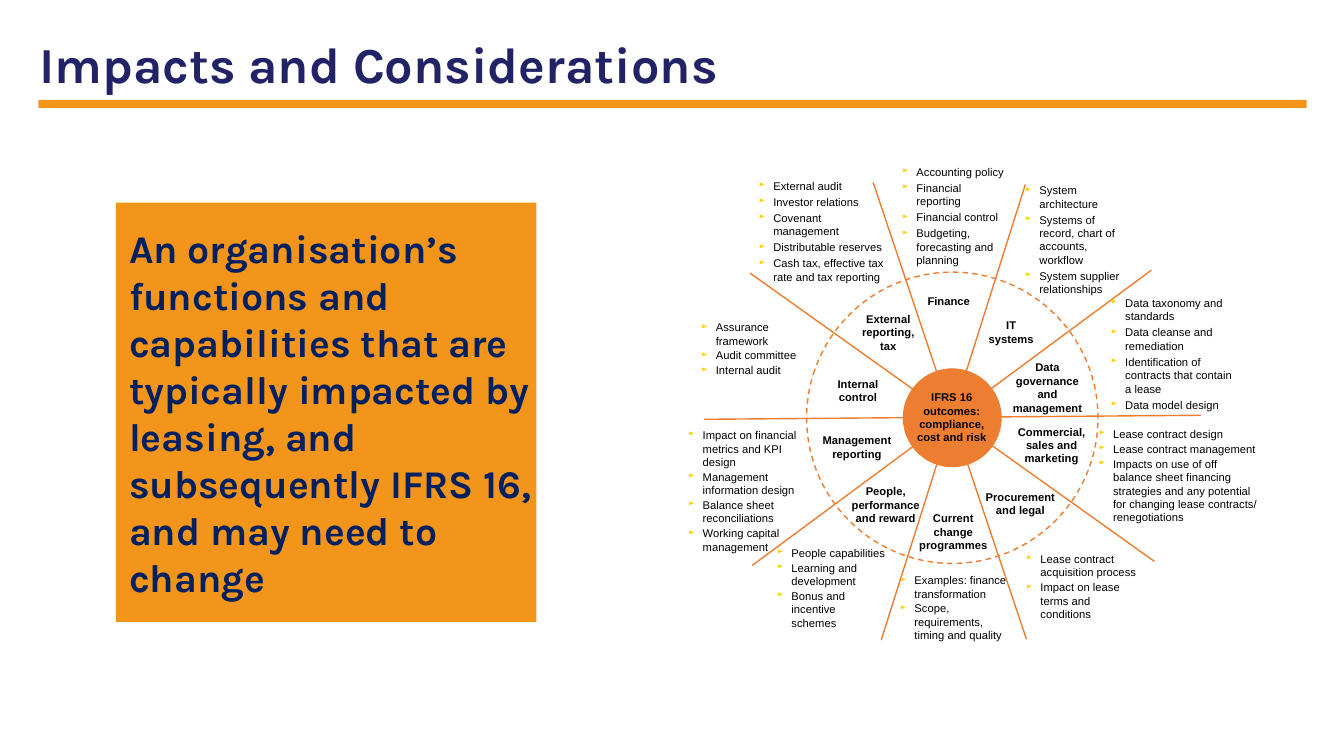
from dataclasses import dataclass

from lxml.etree import SubElement
from pptx import Presentation
from pptx.dml.color import RGBColor
from pptx.enum.dml import MSO_LINE_DASH_STYLE as Dash
from pptx.enum.shapes import MSO_CONNECTOR as Connector, MSO_SHAPE as Preset
from pptx.enum.text import MSO_ANCHOR as Anchor, PP_ALIGN as Align
from pptx.oxml.ns import qn
from pptx.util import Inches, Pt

# Grid: square cells, ten columns and ten rows to the inch
CELL = Inches(0.1)
COLUMNS, ROWS = 133.3, 75

COLOURS = {
    "title": "222266",
    "rule": "F4951B",
    "panel": "F3951B",
    "navy": "002060",
    "wheel": "ED7D31",
    "bullet": "FFD200",
    "text": "000000",
}
LABEL_ROWS = 3.9
IMPACT_ROWS = 6.5


@dataclass(frozen=True)
class Box:
    col: float
    row: float
    cols: float
    rows: float


@dataclass(frozen=True)
class Spoke:
    start: tuple[float, float]
    end: tuple[float, float]


@dataclass(frozen=True)
class Sector:
    label: str
    label_at: tuple[float, float, float]  # column, row, columns wide
    impacts_at: tuple[float, float, float]
    impacts: tuple[str, ...]
    gap: float = 1  # points after each impact


SPOKES = (
    Spoke((101.7, 18.3), (87.4, 63.5)),
    Spoke((74.4, 27.1), (114.5, 55.7)),
    Spoke((74.6, 56.1), (114.2, 26.8)),
    Spoke((101.8, 63.4), (86.6, 18.1)),
    Spoke((119.1, 41.2), (69.8, 41.6)),
)

# Clockwise from the top
SECTORS = (
    Sector("Finance", (89.7, 27.9, 8.8), (89.5, 16.4, 10.3),
           ("Accounting policy", "Financial reporting", "Financial control",
            "Budgeting, forecasting and planning"), 1.8),
    Sector("IT\nsystems", (96.5, 31, 7.6), (101.7, 18.2, 10.3),
           ("System architecture",
            "Systems of record, chart of accounts, workflow",
            "System supplier relationships"), 1.8),
    Sector("Data governance and management", (100.1, 36.5, 7.6), (110.2, 29.4, 12.9),
           ("Data taxonomy and standards", "Data cleanse and remediation",
            "Identification of contracts that contain a lease",
            "Data model design"), 1.8),
    Sector("Commercial, sales and marketing", (100.7, 42.2, 7.2), (109, 42.4, 15.8),
           ("Lease contract design", "Lease contract management",
            "Impacts on use of off balance sheet financing strategies and any "
            "potential for changing lease contracts/\nrenegotiations")),
    Sector("Procurement and legal", (97.6, 48, 7.2), (101.8, 54.8, 11.4),
           ("Lease contract acquisition process",
            "Impact on lease terms and conditions")),
    Sector("Current change programmes", (91.1, 50.8, 6.9), (89.3, 56.9, 10.7),
           ("Examples: finance transformation",
            "Scope, requirements, timing and quality")),
    Sector("People, performance and reward", (84.3, 48.1, 7.1), (77.1, 54.2, 11.4),
           ("People capabilities", "Learning and development",
            "Bonus and incentive\nschemes")),
    Sector("Management reporting", (80.7, 42.4, 8.6), (68.3, 42.5, 11.4),
           ("Impact on financial metrics and KPI design",
            "Management information design", "Balance sheet reconciliations",
            "Working capital management")),
    Sector("Internal\ncontrol", (81.3, 36.8, 7.6), (69.6, 31.8, 11.4),
           ("Assurance framework", "Audit committee", "Internal audit")),
    Sector("External reporting, tax", (85, 31, 6.2), (75.3, 17.8, 12.5),
           ("External audit", "Investor relations", "Covenant management",
            "Distributable reserves",
            "Cash tax, effective tax rate and tax reporting"), 1.8),
)


def colour(name: str) -> RGBColor:
    return RGBColor.from_string(COLOURS[name])


def cells(*counts: float) -> list[int]:
    return [round(count * CELL) for count in counts]


def place(box: Box) -> list[int]:
    return cells(box.col, box.row, box.cols, box.rows)


def set_font(paragraph, name: str, size: float, ink: str, bold: bool = True) -> None:
    font = paragraph.font
    font.name, font.size, font.bold = name, Pt(size), bold
    font.color.rgb = colour(ink)


def set_insets(frame, left: float, top: float, right: float, bottom: float) -> None:
    frame.margin_left, frame.margin_top, frame.margin_right, frame.margin_bottom = cells(
        left, top, right, bottom)


def add_bullet(paragraph) -> None:
    props = paragraph._p.get_or_add_pPr()
    props.set("marL", str(Inches(0.14)))
    props.set("indent", str(-Inches(0.14)))
    tint = SubElement(props, qn("a:buClr"))
    SubElement(tint, qn("a:srgbClr"), val=COLOURS["bullet"])
    SubElement(props, qn("a:buSzPct"), val="70000")
    SubElement(props, qn("a:buChar"), char="►")


def add_preset(slide, preset: Preset, box: Box, fill: str | None = None,
               outline: str | None = None, weight: float = 1):
    shape = slide.shapes.add_shape(preset, *place(box))
    shape.shadow.inherit = False
    if fill:
        shape.fill.solid()
        shape.fill.fore_color.rgb = colour(fill)
    else:
        shape.fill.background()
    if outline:
        shape.line.color.rgb = colour(outline)
        shape.line.width = Pt(weight)
    else:
        shape.line.fill.background()
    return shape


def add_spoke(slide, spoke: Spoke) -> None:
    line = slide.shapes.add_connector(
        Connector.STRAIGHT, *cells(*spoke.start, *spoke.end))
    line.line.color.rgb = colour("wheel")
    line.line.width = Pt(1)
    SubElement(line._element.spPr, qn("a:effectLst"))


def add_label(slide, text: str, box: Box) -> None:
    frame = slide.shapes.add_textbox(*place(box)).text_frame
    frame.word_wrap = True
    frame.vertical_anchor = Anchor.MIDDLE
    set_insets(frame, 0, 0.5, 0, 0.5)
    paragraph = frame.paragraphs[0]
    paragraph.text = text
    paragraph.alignment = Align.CENTER
    paragraph.space_after = Pt(1.8)
    set_font(paragraph, "Arial", 8, "text")


def add_impacts(slide, sector: Sector) -> None:
    box = Box(*sector.impacts_at, IMPACT_ROWS)
    frame = slide.shapes.add_textbox(*place(box)).text_frame
    frame.word_wrap = True
    set_insets(frame, 0, 0, 0, 0)
    for index, impact in enumerate(sector.impacts):
        paragraph = frame.add_paragraph() if index else frame.paragraphs[0]
        paragraph.text = impact
        paragraph.level = 1
        paragraph.space_after = Pt(sector.gap)
        add_bullet(paragraph)
        set_font(paragraph, "Arial", 8, "text", bold=False)


def main() -> None:
    deck = Presentation()
    deck.slide_width, deck.slide_height = cells(COLUMNS, ROWS)
    slide = deck.slides.add_slide(deck.slide_layouts[6])

    # Heading and rule
    heading = slide.shapes.add_textbox(*cells(2.9, 2.8, 107.4, 7.1)).text_frame
    heading.word_wrap = True
    heading.paragraphs[0].text = "Impacts and Considerations"
    set_font(heading.paragraphs[0], "Karla", 36, "title")
    add_preset(slide, Preset.RECTANGLE, Box(3.8, 9.9, 125.8, 0.8), "rule")

    # Wheel
    for spoke in SPOKES:
        add_spoke(slide, spoke)
    rim = add_preset(slide, Preset.OVAL, Box(80, 27, 28.9, 28.9), outline="wheel")
    rim.line.dash_style = Dash.DASH
    rim.rotation = 17.5
    add_preset(slide, Preset.OVAL, Box(89.6, 36.6, 9.7, 9.7), "wheel", "wheel", 0.75)
    add_label(slide, "IFRS 16 outcomes: compliance,\ncost and risk",
              Box(90, 38, 8.8, 6.8))
    for sector in SECTORS:
        add_label(slide, sector.label, Box(*sector.label_at, LABEL_ROWS))
        add_impacts(slide, sector)

    # Statement panel
    panel = add_preset(slide, Preset.RECTANGLE, Box(11.5, 20.1, 41.7, 41.6), "panel")
    statement = panel.text_frame
    statement.word_wrap = True
    statement.vertical_anchor = Anchor.MIDDLE
    set_insets(statement, 1.3, 0.4, 0.4, 0.4)
    paragraph = statement.paragraphs[0]
    paragraph.text = ("An organisation’s functions and capabilities that are typically "
                      "impacted by leasing, and subsequently IFRS 16, and may need to change")
    paragraph.alignment = Align.LEFT
    set_font(paragraph, "Karla", 28, "navy")

    deck.save("out.pptx")


if __name__ == "__main__":
    main()
